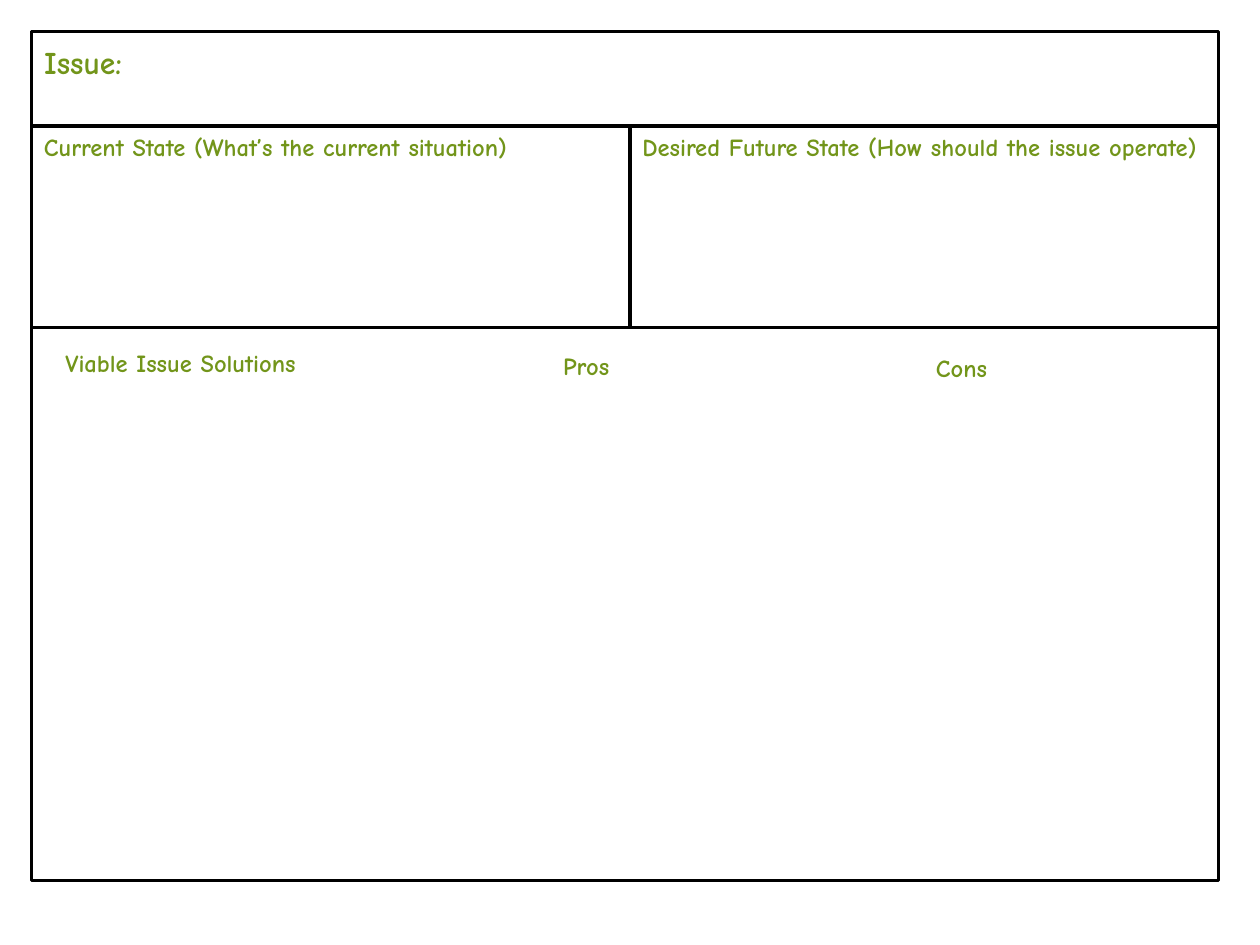
from dataclasses import dataclass

from pptx import Presentation
from pptx.dml.color import RGBColor
from pptx.enum.shapes import MSO_SHAPE
from pptx.enum.text import MSO_ANCHOR, MSO_AUTO_SIZE, PP_ALIGN
from pptx.util import Inches, Pt


@dataclass(frozen=True)
class Theme:
    font: str = "Comic Neue"
    heading: RGBColor = RGBColor(0x72, 0x95, 0x1A)
    border: RGBColor = RGBColor(0, 0, 0)
    border_width: float = 2
    title_size: float = 18
    label_size: float = 14


THEME = Theme()

# Grid lines of the worksheet, in inches
LEFT, MIDDLE, RIGHT = 0.25, 5, 9.67
TOP, STATES_TOP, SOLUTIONS_TOP, BOTTOM = 0.25, 1, 2.6, 6.99

# Column headings: text, then left, top and width within the solutions panel
SOLUTION_COLUMNS = (
    ("Viable Issue Solutions", 0.17, 0.11, 2.72),
    ("Pros", 4.12, 0.14, 1.18),
    ("Cons", 7.08, 0.15, 1.26),
)
LABEL_HEIGHT = 0.34


def write_text(shape, text, size=THEME.label_size, inset_top=0.05):
    frame = shape.text_frame
    frame.word_wrap = True
    frame.auto_size = MSO_AUTO_SIZE.NONE
    frame.vertical_anchor = MSO_ANCHOR.TOP
    frame.margin_top = Inches(inset_top)
    paragraph = frame.paragraphs[0]
    paragraph.alignment = PP_ALIGN.LEFT
    run = paragraph.add_run()
    run.text = text
    run.font.name = THEME.font
    run.font.size = Pt(size)
    run.font.bold = True
    run.font.color.rgb = THEME.heading


def outline(shape):
    shape.fill.background()
    shape.line.color.rgb = THEME.border
    shape.line.width = Pt(THEME.border_width)


def add_panel(slide, left, top, right, bottom):
    panel = slide.shapes.add_shape(
        MSO_SHAPE.RECTANGLE, Inches(left), Inches(top),
        Inches(right - left), Inches(bottom - top))
    panel.shadow.inherit = False
    outline(panel)
    return panel


def place_issue(slide, left, top, right, bottom):
    title = slide.shapes.title
    title.left, title.top = Inches(left), Inches(top)
    title.width, title.height = Inches(right - left), Inches(bottom - top)
    outline(title)
    write_text(title, "Issue:", size=THEME.title_size, inset_top=0.09)


def place_states(slide, left, middle, right, top, bottom):
    current = add_panel(slide, left, top, middle, bottom)
    write_text(current, "Current State (What’s the current situation)")
    desired = add_panel(slide, middle, top, right, bottom)
    write_text(desired, "Desired Future State (How should the issue operate)")


def place_solutions(slide, left, top, right, bottom):
    add_panel(slide, left, top, right, bottom)
    for text, offset_left, offset_top, width in SOLUTION_COLUMNS:
        label = slide.shapes.add_textbox(
            Inches(left + offset_left), Inches(top + offset_top),
            Inches(width), Inches(LABEL_HEIGHT))
        write_text(label, text)


def main():
    presentation = Presentation()
    presentation.slide_width = Inches(10)
    presentation.slide_height = Inches(7.5)
    title_only = presentation.slide_layouts[5]
    slide = presentation.slides.add_slide(title_only)

    # Issue on top, the two states side by side, solutions below
    place_issue(slide, LEFT, TOP, RIGHT, STATES_TOP)
    place_states(slide, LEFT, MIDDLE, RIGHT, STATES_TOP, SOLUTIONS_TOP)
    place_solutions(slide, LEFT, SOLUTIONS_TOP, RIGHT, BOTTOM)

    presentation.save("out.pptx")


if __name__ == "__main__":
    main()
